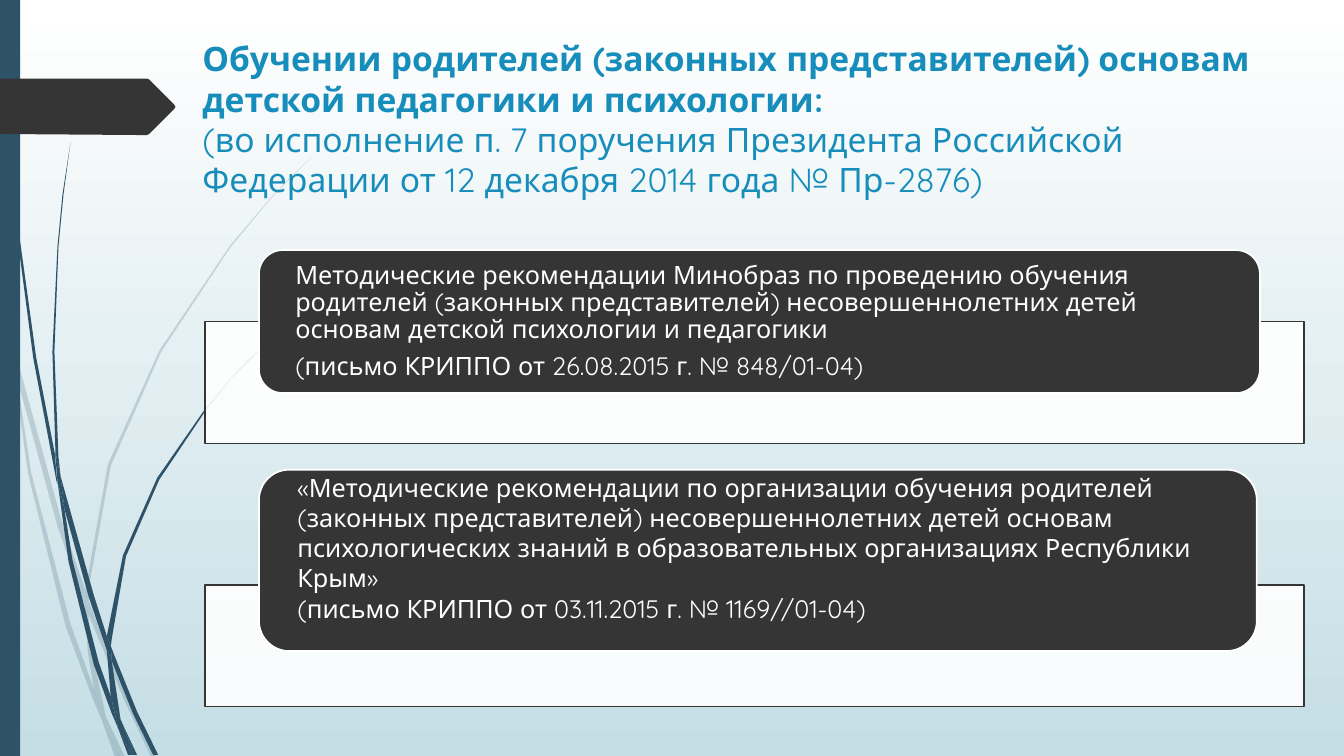
import pptx
import pptx.util
import pptx.dml.color
import pptx.enum.shapes
import pptx.enum.text
import pptx.oxml.ns
import lxml.etree

Pt = pptx.util.Pt
RGB = pptx.dml.color.RGBColor
KIND = pptx.enum.shapes.MSO_SHAPE
ANCHOR = pptx.enum.text.MSO_ANCHOR

WHITE = RGB(0xFF, 0xFF, 0xFF)
MIST = RGB(0xC5, 0xDE, 0xE5)
TEAL = RGB(0x2E, 0x53, 0x69)
DARK = RGB(0x35, 0x35, 0x35)
BLUE = RGB(0x17, 0x8D, 0xBB)
FACE = "Quicksand"

TITLE = [
    ("Обучении родителей (законных представителей) основам детской педагогики и психологии:", True),
    ("(во исполнение п. 7 поручения Президента Российской Федерации от 12 декабря 2014 года № Пр-2876)", False),
]
CARDS = [
    {"panel": 229.7, "tab": (185, 178.6, 715, 102.2), "box": (190, 183.6, 705, 92.2),
     "line": 0.9, "after": 6.3, "text": [
         "Методические рекомендации Минобраз по проведению обучения родителей (законных представителей) "
         "несовершеннолетних детей основам детской психологии и педагогики",
         "(письмо КРИППО от 26.08.2015 г. № 848/01-04)"]},
    {"panel": 417.6, "tab": (185, 335.5, 712.8, 129.6), "box": (191.5, 332.4, 699.8, 117.4),
     "line": 1.0, "after": 0, "text": [
         "«Методические рекомендации по организации обучения родителей (законных представителей) "
         "несовершеннолетних детей основам психологических знаний в образовательных организациях "
         "Республики Крым»",
         "(письмо КРИППО от 03.11.2015 г. № 1169//01-04)"]},
]

UNIT = 0.72
PALE = [
    [(11, 350), (8, 322), (0, 282), (0, 299), (10, 344)],
    [(57, 522), (84, 599), (85, 586), (62, 520), (14, 345), (17, 376)],
    [(92, 607), (88, 596), (88, 610), (123, 694), (150, 751), (155, 751), (127, 692)],
    [(119, 751), (124, 751), (105, 711)],
    [(93, 683), (70, 619), (31, 469), (17, 376), (11, 350), (28, 470), (65, 621), (92, 693),
     (101, 714), (99, 707)],
    [(84, 599), (87, 646), (93, 683), (96, 692), (105, 711), (104, 706), (91, 646), (88, 610),
     (88, 608)],
    [(88, 584), (110, 462), (160, 349), (229, 245), (268, 198), (290, 175), (312, 153),
     (289, 175), (268, 197), (228, 244), (158, 348), (107, 461), (85, 584), (85, 586), (88, 596)],
    [(101, 714), (114, 751), (119, 751)],
    [(88, 608), (88, 610), (88, 596), (85, 586), (84, 599)],
    [(96, 692), (93, 683), (99, 707), (101, 714), (119, 751), (105, 711)],
]
DEEP = [
    [(7, 110), (17, 233), (33, 355), (56, 477), (57, 481), (55, 457), (55, 453), (36, 355),
     (19, 232), (8, 109), (5, 48), (3, 0), (3, 48)],
    [(88, 592), (106, 645), (106, 633), (106, 631), (93, 590), (60, 472), (64, 505)],
    [(113, 649), (110, 641), (111, 656), (132, 708), (152, 749), (157, 749), (136, 706)],
    [(110, 691), (98, 657), (72, 556), (64, 505), (57, 477), (68, 557), (93, 659), (111, 708),
     (117, 722), (116, 717)],
    [(60, 472), (58, 453), (54, 349), (58, 245), (63, 193), (70, 141), (62, 193), (57, 245),
     (52, 349), (55, 449)],
    [(133, 749), (136, 749), (122, 719)],
    [(57, 477), (64, 505), (60, 472), (55, 449), (55, 453)],
    [(111, 633), (125, 552), (158, 476), (205, 406), (231, 374), (246, 359), (261, 344),
     (245, 358), (231, 373), (204, 405), (156, 474), (122, 551), (106, 631), (110, 641)],
    [(117, 722), (127, 749), (131, 749)],
    [(106, 645), (110, 692), (116, 706), (122, 719), (120, 716), (111, 656), (109, 651)],
    [(106, 645), (109, 651), (111, 656), (110, 641), (106, 631), (106, 633)],
    [(116, 706), (110, 691), (116, 717), (117, 722), (131, 749), (133, 749), (122, 719)],
]
ARROW = [(173, 108), (148, 133), (146, 134), (136, 134), (-1, 133), (0, 78), (136, 78),
         (146, 78), (148, 79), (173, 104), (174, 106)]

deck = pptx.Presentation()
deck.slide_width, deck.slide_height = Pt(960), Pt(540)
slide = deck.slides.add_slide(deck.slide_layouts[6])
shapes = slide.shapes


def paint(shape, color, alpha=100, edge=None):
    shape.shadow.inherit = False
    shape.fill.solid()
    shape.fill.fore_color.rgb = color
    if alpha < 100:
        tint = shape.fill._xPr.find(".//" + pptx.oxml.ns.qn("a:srgbClr"))
        lxml.etree.SubElement(tint, pptx.oxml.ns.qn("a:alpha"), val=str(alpha * 1000))
    if edge is None:
        shape.line.fill.background()
    else:
        shape.line.color.rgb = edge
        shape.line.width = Pt(1.25)


def block(kind, box, color, alpha=100, edge=None):
    paint(shapes.add_shape(kind, *map(Pt, box)), color, alpha, edge)


def trace(dots, color, alpha=100):
    pen = shapes.build_freeform(*dots[0], scale=Pt(UNIT))
    pen.add_line_segments(dots[1:], close=True)
    paint(pen.convert_to_shape(), color, alpha)


def frame(box, side, edge, anchor):
    body = shapes.add_textbox(*map(Pt, box)).text_frame
    body.word_wrap = True
    body.vertical_anchor = anchor
    body.margin_left = body.margin_right = Pt(side)
    body.margin_top = body.margin_bottom = Pt(edge)
    return body


def style(run, size, color, bold=False):
    run.font.name = FACE
    run.font.size = Pt(size)
    run.font.color.rgb = color
    run.font.bold = bold


back = slide.background.fill
back.gradient()
back.gradient_angle = 270
for stop, color, place in zip(back.gradient_stops, (WHITE, MIST), (0, 1)):
    stop.color.rgb = color
    stop.position = place

for group, alpha in ((PALE, 20), (DEEP, 100)):
    for dots in group:
        trace(dots, TEAL, alpha)
block(KIND.RECTANGLE, (0, 0, 14.4, 540), TEAL)
trace(ARROW, DARK)

head = frame((137.5, 23.8, 800, 128.9), 7.2, 3.6, ANCHOR.TOP).paragraphs[0]
head.text = "\v".join(text for text, bold in TITLE)
for run, (text, bold) in zip(head.runs, TITLE):
    style(run, 24, BLUE, bold)

for card in CARDS:
    block(KIND.RECTANGLE, (146.2, card["panel"], 785.5, 87.1), WHITE, 90, DARK)
    block(KIND.ROUNDED_RECTANGLE, card["tab"], DARK, edge=WHITE)
    body = frame(card["box"], 20.9, 0, ANCHOR.MIDDLE)
    body.text = "\n".join(card["text"])
    for para in body.paragraphs:
        para.line_spacing = card["line"]
        para.space_after = Pt(card["after"])
        style(para.runs[0], 18, WHITE)

deck.save("out.pptx")
